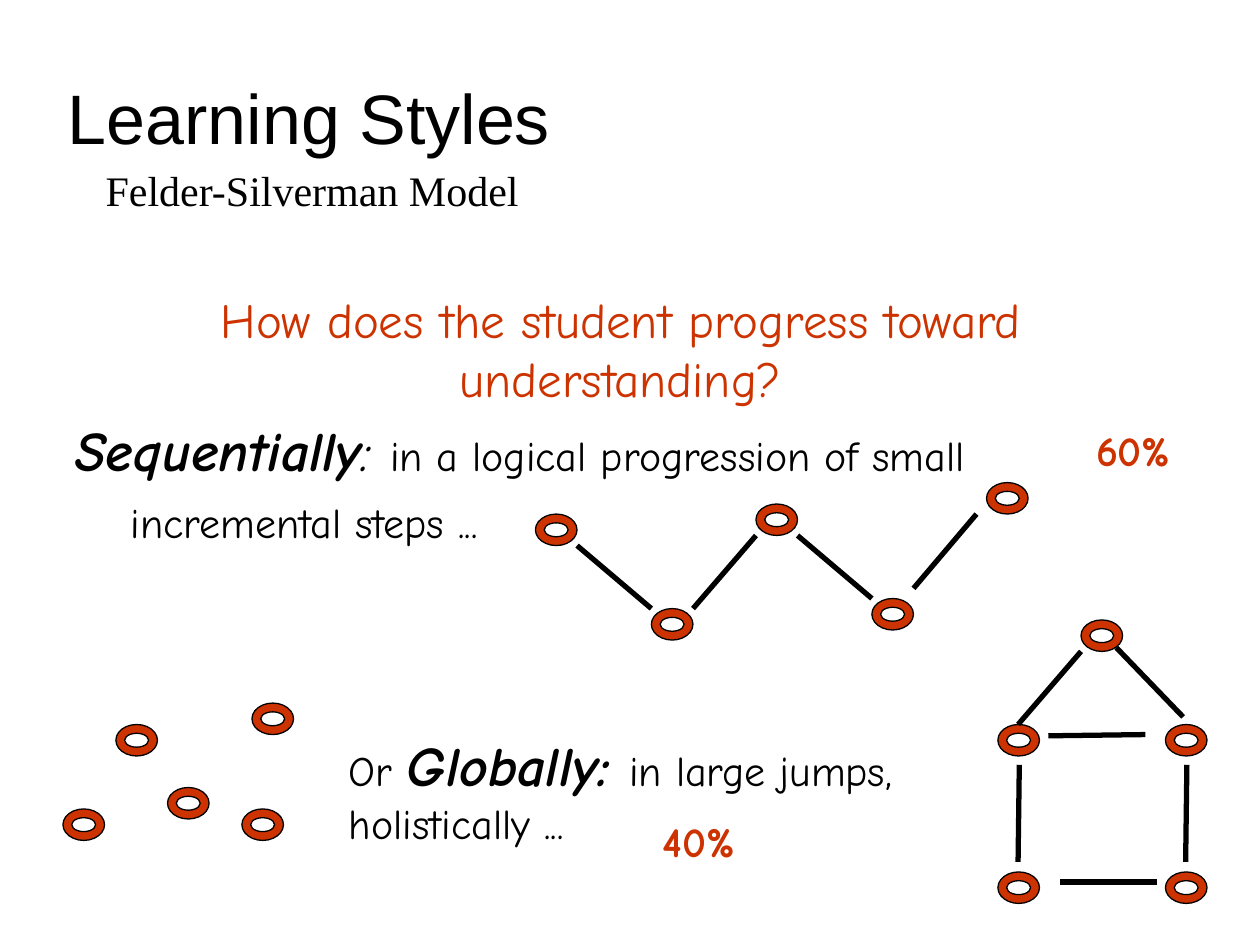
from pptx import Presentation
from pptx.dml.color import RGBColor
from pptx.enum.shapes import MSO_CONNECTOR as CONN, MSO_SHAPE as SHAPE
from pptx.enum.text import MSO_ANCHOR as ANCHOR, PP_ALIGN as ALIGN
from pptx.oxml.ns import qn
from pptx.util import Inches, Pt
from lxml import etree

COLORS = {"black": "000000", "red": "CC3300"}
COMIC = "Comic Neue"
RING_W, RING_H = 0.33, 0.25

# Top left corners of the rings, and the ends of the links between them
STEPS = {
    "rings": [(4.25, 4.08), (5.17, 4.83), (6, 4), (6.92, 4.75), (7.83, 3.83)],
    "links": [(5.17, 4.83, 4.58, 4.33), (5.5, 4.83, 6, 4.25),
              (6.92, 4.75, 6.33, 4.25), (7.25, 4.67, 7.75, 4.08)],
}
SCATTER = {
    "rings": [(0.5, 6.42), (0.92, 5.75), (1.92, 6.42), (1.33, 6.25), (2, 5.58)],
    "links": [],
}
HOUSE = {
    "rings": [(8.58, 4.92), (7.92, 5.75), (9.25, 5.75), (7.92, 6.92), (9.25, 6.92)],
    "links": [(8.08, 5.75, 8.58, 5.17), (8.86, 5.14, 9.39, 5.69),
              (9.09, 5.83, 8.32, 5.84), (8.08, 6.84, 8.09, 6.07),
              (9.41, 6.84, 9.42, 6.07), (9.18, 7, 8.41, 7)],
}


def rgb(name):
    return RGBColor.from_string(COLORS[name])


def add_text(s, box, runs, align=ALIGN.LEFT, anchor=ANCHOR.TOP, margin=0, indent=0):
    """Add one paragraph; each run is (text, size, font, colour, bold, italic)."""
    tf = s.shapes.add_textbox(*map(Inches, box)).text_frame
    tf.word_wrap = True
    tf.vertical_anchor = anchor
    p = tf.paragraphs[0]
    p.alignment = align
    pPr = p._p.get_or_add_pPr()
    pPr.set("marL", str(Inches(margin)))
    pPr.set("indent", str(Inches(indent)))
    for text, size, font, color, bold, italic in runs:
        r = p.add_run()
        r.text = text
        r.font.size = Pt(size)
        r.font.name = font
        r.font.color.rgb = rgb(color)
        r.font.bold = bold
        r.font.italic = italic


def add_ring(shapes, x, y):
    sp = shapes.add_shape(SHAPE.DONUT, Inches(x), Inches(y), Inches(RING_W), Inches(RING_H))
    sp.shadow.inherit = False
    sp.adjustments[0] = 0.28
    sp.fill.solid()
    sp.fill.fore_color.rgb = rgb("red")
    sp.line.color.rgb = rgb("black")
    sp.line.width = Pt(0.75)


def add_link(shapes, *ends):
    line = shapes.add_connector(CONN.STRAIGHT, *map(Inches, ends))
    line.line.color.rgb = rgb("black")
    line.line.width = Pt(3)
    etree.SubElement(line._element.spPr, qn("a:effectLst"))


def add_diagram(s, diagram):
    shapes = s.shapes.add_group_shape().shapes
    for ring in diagram["rings"]:
        add_ring(shapes, *ring)
    for link in diagram["links"]:
        add_link(shapes, *link)


def main():
    prs = Presentation()
    prs.slide_width, prs.slide_height = Inches(10), Inches(7.5)
    s = prs.slides.add_slide(prs.slide_layouts[6])

    add_text(s, (0.44, 0.56, 8.5, 0.75),
             [("Learning Styles", 40, "Arial", "black", False, False)], anchor=ANCHOR.BOTTOM)
    add_text(s, (0.74, 1.26, 3.84, 0.5),
             [("Felder-Silverman Model", 24, "Times New Roman", "black", False, False)])
    add_text(s, (0.42, 2.25, 8.89, 1.12),
             [("How does the student progress toward understanding?",
               28, COMIC, "red", False, False)], align=ALIGN.CENTER, margin=0.12)
    add_text(s, (0.5, 3.25, 9, 1.03),
             [("Sequentially", 32, COMIC, "black", True, True),
              (": ", 32, COMIC, "black", False, True),
              ("in a logical progression of small incremental steps ...",
               24, COMIC, "black", False, False),
              (" ", 32, "Arial", "black", False, False)], margin=0.44, indent=-0.44)
    add_text(s, (2.67, 5.75, 5.75, 1.03),
             [("Or ", 24, COMIC, "black", False, False),
              ("Globally: ", 32, COMIC, "black", True, True),
              ("in large jumps, holistically ...", 24, COMIC, "black", False, False)])

    for diagram in (STEPS, SCATTER, HOUSE):
        add_diagram(s, diagram)

    for x, y, share in ((8.6, 3.32, "60%"), (5.16, 6.42, "40%")):
        add_text(s, (x, y, 1.11, 0.5), [(share, 24, COMIC, "red", True, False)])

    prs.save("out.pptx")


if __name__ == "__main__":
    main()
